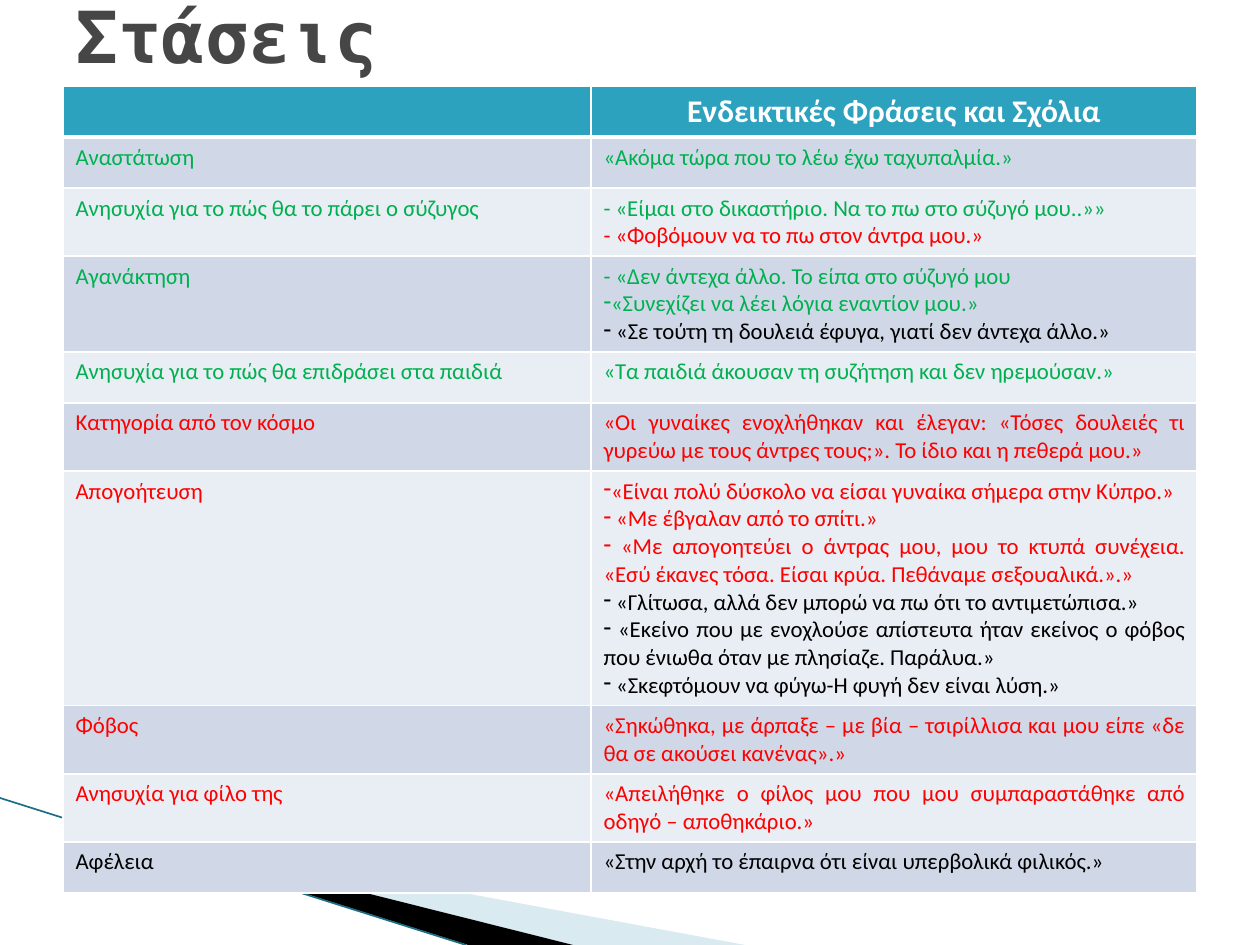
import pptx
import pptx.dml.color
import pptx.enum.shapes
import pptx.enum.text
import pptx.oxml
import pptx.oxml.ns
import pptx.util

SCALE = 914400 / 126
ALIGN = pptx.enum.text.PP_ALIGN
GREEN, RED, BLACK, WHITE = "00B050", "FF0000", "000000", "FFFFFF"
HEAD, BANDS = "2DA2BF", ("D0D8E8", "E9EDF4")

# Each row: label colour, label, then lines of (colour, text, dash bullet).
ROWS = [
    (GREEN, "Αναστάτωση",
     [(GREEN, "«Ακόμα τώρα που το λέω έχω ταχυπαλμία.»", False)]),
    (GREEN, "Ανησυχία για το πώς θα το πάρει ο σύζυγος",
     [(GREEN, "- «Είμαι στο δικαστήριο. Να το πω στο σύζυγό μου..»»", False),
      (RED, "- «Φοβόμουν να το πω στον άντρα μου.»", False)]),
    (GREEN, "Αγανάκτηση",
     [(GREEN, "- «Δεν άντεχα άλλο. Το είπα στο σύζυγό μου", False),
      (GREEN, "«Συνεχίζει να λέει λόγια εναντίον μου.»", True),
      (BLACK, " «Σε τούτη τη δουλειά έφυγα, γιατί δεν άντεχα άλλο.»", True)]),
    (GREEN, "Ανησυχία για το πώς θα επιδράσει στα παιδιά",
     [(GREEN, "«Τα παιδιά άκουσαν τη συζήτηση και δεν ηρεμούσαν.»", False)]),
    (RED, "Κατηγορία από τον κόσμο",
     [(RED, "«Οι γυναίκες ενοχλήθηκαν και έλεγαν: «Τόσες δουλειές τι "
       "γυρεύω με τους άντρες τους;». Το ίδιο και η πεθερά μου.»", False)]),
    (RED, "Απογοήτευση",
     [(RED, "«Είναι πολύ δύσκολο να είσαι γυναίκα σήμερα στην Κύπρο.»", True),
      (RED, " «Με έβγαλαν από το σπίτι.»", True),
      (RED, " «Με απογοητεύει ο άντρας μου, μου το κτυπά συνέχεια. "
       "«Εσύ έκανες τόσα. Είσαι κρύα. Πεθάναμε σεξουαλικά.».»", True),
      (BLACK, " «Γλίτωσα, αλλά δεν μπορώ να πω ότι το αντιμετώπισα.»", True),
      (BLACK, " «Εκείνο που με ενοχλούσε απίστευτα ήταν εκείνος ο φόβος "
       "που ένιωθα όταν με πλησίαζε. Παράλυα.»", True),
      (BLACK, " «Σκεφτόμουν να φύγω-Η φυγή δεν είναι λύση.»", True)]),
    (RED, "Φόβος",
     [(RED, "«Σηκώθηκα, με άρπαξε – με βία – τσιρίλλισα και μου είπε «δε "
       "θα σε ακούσει κανένας».»", False)]),
    (RED, "Ανησυχία για φίλο της",
     [(RED, "«Απειλήθηκε ο φίλος μου που μου συμπαραστάθηκε από "
       "οδηγό – αποθηκάριο.»", False)]),
    (BLACK, "Αφέλεια",
     [(BLACK, "«Στην αρχή το έπαιρνα ότι είναι υπερβολικά φιλικός.»", False)]),
]


def px(n):
    return pptx.util.Emu(round(n * SCALE))


def rgb(code):
    return pptx.dml.color.RGBColor.from_string(code)


def add(parent, tag, **attrs):
    node = pptx.oxml.ns.qn(tag)
    child = parent.makeelement(node, attrs)
    parent.append(child)
    return child


class Deck:
    def __init__(self):
        self.prs = pptx.Presentation()
        self.prs.slide_width, self.prs.slide_height = px(1260), px(945)
        self.slide = self.prs.slides.add_slide(self.prs.slide_layouts[5])
        self.shapes = self.slide.shapes

    def font(self, para, size, color, bold=False, face="Calibri"):
        font = para.font
        font.name, font.size, font.bold = face, pptx.util.Pt(size), bold
        font.color.rgb = rgb(color)

    def title(self, text, x, y, w, h):
        box = self.shapes.title
        box.left, box.top, box.width, box.height = map(px, (x, y, w, h))
        frame = box.text_frame
        frame.text = text
        frame.vertical_anchor = pptx.enum.text.MSO_ANCHOR.MIDDLE
        frame.auto_size = pptx.enum.text.MSO_AUTO_SIZE.NONE
        para = frame.paragraphs[0]
        para.alignment = ALIGN.LEFT
        self.font(para, 41, "464646", True, "DejaVu Sans Mono")

    def wedge(self, points, color, alpha=100):
        """Draw a filled outline; alpha is the opacity in percent."""
        build = self.shapes.build_freeform(*points[0], scale=SCALE)
        build.add_line_segments(points[1:])
        shape = build.convert_to_shape()
        shape.shadow.inherit = False
        shape.fill.solid()
        shape.fill.fore_color.rgb = rgb(color)
        shape.line.fill.background()
        if alpha < 100:
            fill = shape.fill._xPr.find(pptx.oxml.ns.qn("a:solidFill"))
            add(fill[0], "a:alpha", val=str(alpha * 1000))

    def line(self, x1, y1, x2, y2, color, width):
        kind = pptx.enum.shapes.MSO_CONNECTOR.STRAIGHT
        rule = self.shapes.add_connector(kind, *map(px, (x1, y1, x2, y2)))
        rule.line.color.rgb = rgb(color)
        rule.line.width = pptx.util.Pt(width)
        add(rule._element.spPr, "a:effectLst")

    def cell(self, cell, fill, lines, size, align, bold=False, top=1, base=1):
        """Fill a cell; top and base are its border widths in points."""
        props = cell._tc.get_or_add_tcPr()
        for side, width in zip("LRTB", (1, 1, top, base)):
            edge = add(props, f"a:ln{side}", w=str(width * 12700))
            add(add(edge, "a:solidFill"), "a:srgbClr", val=WHITE)
        cell.fill.solid()
        cell.fill.fore_color.rgb = rgb(fill)
        frame = cell.text_frame
        for i, (color, text, dash) in enumerate(lines):
            para = frame.add_paragraph() if i else frame.paragraphs[0]
            para.text, para.alignment = text, align
            if dash:
                add(para._p.get_or_add_pPr(), "a:buChar", char="-")
            self.font(para, size, color, bold)

    def table(self, x, y, cols, row, head, rows):
        frame = self.shapes.add_table(len(rows) + 1, len(cols), px(x), px(y),
                                      px(sum(cols)), px(row * (len(rows) + 1)))
        grid = frame.table
        for col, width in zip(grid.columns, cols):
            col.width = px(width)
        for line in grid.rows:
            line.height = px(row)
        for c, text in enumerate(head):
            lines = [(WHITE, text, False)] if text else []
            self.cell(grid.cell(0, c), HEAD, lines, 18, ALIGN.CENTER, True,
                      base=3)
        for r, (color, label, lines) in enumerate(rows, 1):
            fill, top = BANDS[(r - 1) % 2], 3 if r == 1 else 1
            self.cell(grid.cell(r, 0), fill, [(color, label, False)], 13,
                      ALIGN.LEFT, top=top)
            self.cell(grid.cell(r, 1), fill, lines, 13, ALIGN.JUSTIFY, top=top)


def main():
    deck = Deck()
    deck.wedge([(69, 820), (745, 945), (573, 945), (69, 819)], "A0CBDC", 40)
    deck.wedge([(67, 818), (573, 945), (468, 945), (68, 819)], BLACK)
    deck.line(0, 798, 466, 945, "1A6F85", 0.95)
    deck.title("Στάσεις", 63, -44, 1134, 158)
    deck.table(63, 86, (528, 606), 51,
               ("", "Ενδεικτικές Φράσεις και Σχόλια"), ROWS)
    deck.prs.save("out.pptx")


if __name__ == "__main__":
    main()
